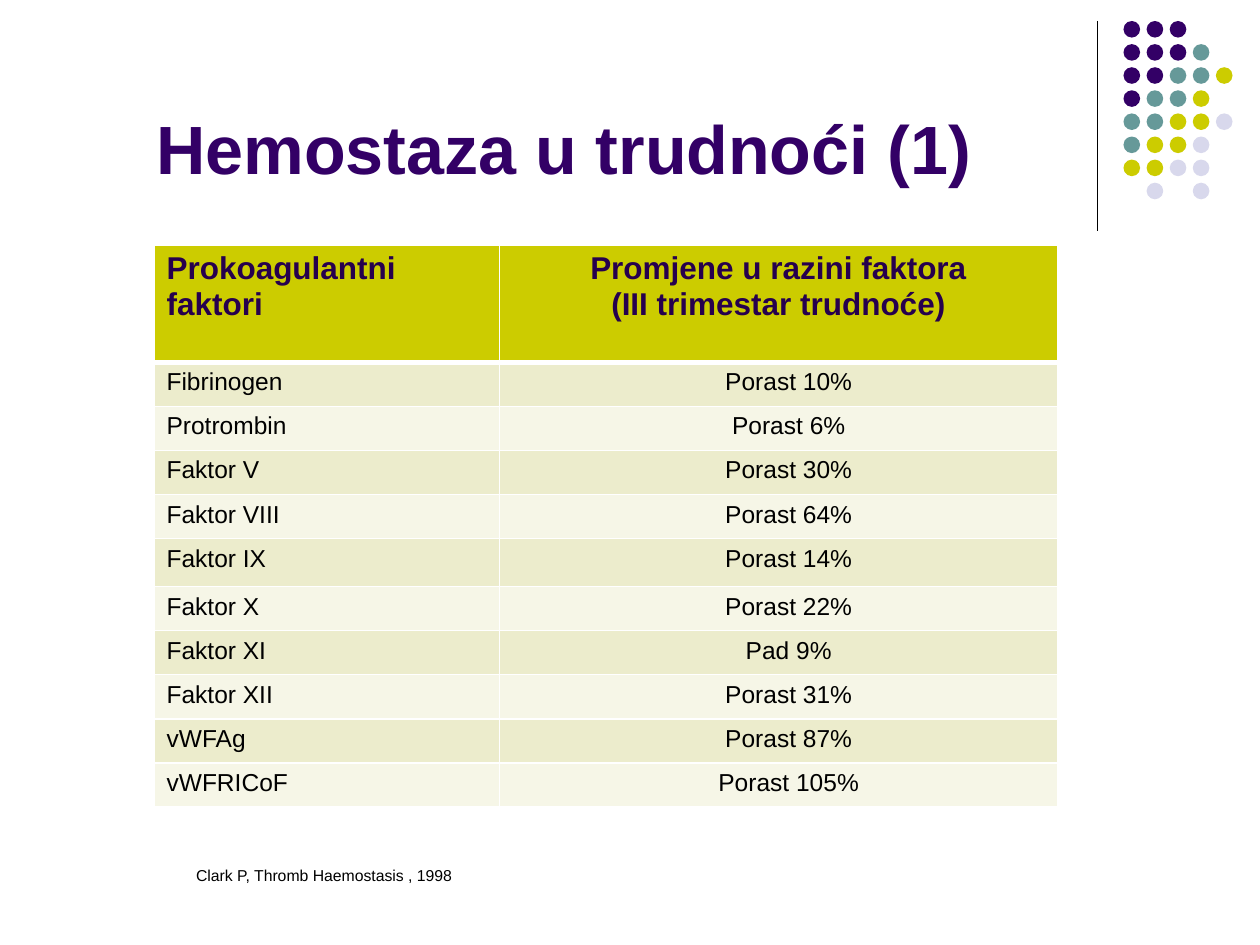
from pptx import Presentation
from pptx import util as u
from pptx.dml.color import RGBColor
from pptx.enum import shapes, text
from pptx.oxml import parse_xml
from pptx.oxml.ns import nsdecls

Pt = u.Pt
HUES = {"dark": "330066", "teal": "669999", "lime": "CCCC00", "pale": "D8D8EC",
        "head": "26004D", "odd": "ECECCC", "even": "F6F6E7",
        "black": "000000", "white": "FFFFFF"}
TITLE = "Hemostaza u trudnoći (1)"
SOURCE = "Clark P, Thromb Haemostasis , 1998"
ROWS = [
    ("Prokoagulantni faktori", "Promjene u razini faktora\n(III trimestar trudnoće)"),
    ("Fibrinogen", "Porast 10%"),
    ("Protrombin", "Porast 6%"),
    ("Faktor V", "Porast 30%"),
    ("Faktor VIII", "Porast 64%"),
    ("Faktor IX", "Porast 14%"),
    ("Faktor X", "Porast 22%"),
    ("Faktor XI", "Pad 9%"),
    ("Faktor XII", "Porast 31%"),
    ("vWFAg", "Porast 87%"),
    ("vWFRICoF", "Porast 105%"),
]
WIDTHS = [197.4, 318.9]
HEIGHTS = [67] + [25.2] * 4 + [27.4] + [25.2] * 5
DOTS = ["DDD", "DDDT", "DDTTL", "DTTL", "TTLLP", "TLLP", "LLPP", " P P"]
KEYS = {"D": "dark", "T": "teal", "L": "lime", "P": "pale"}


def color(name):
    return RGBColor.from_string(HUES[name])


def style(frame, size, hue, bold=False):
    for para in frame.paragraphs:
        for run in para.runs:
            font = run.font
            font.name, font.size, font.bold = "Arial", Pt(size), bold
            font.color.rgb = color(hue)


def border(cell, bottom):
    props = cell._tc.get_or_add_tcPr()
    sides = [("lnL", 1), ("lnR", 1), ("lnT", 1), ("lnB", bottom)]
    for spot, (side, width) in enumerate(sides):
        props.insert(spot, parse_xml(
            f'<a:{side} {nsdecls("a")} w="{Pt(width)}"><a:solidFill>'
            f'<a:srgbClr val="{HUES["white"]}"/></a:solidFill></a:{side}>'))


def add_dots(slide):
    rule = slide.shapes.add_connector(
        shapes.MSO_CONNECTOR.STRAIGHT, Pt(627), Pt(12), Pt(627), Pt(132))
    rule.line.color.rgb = color("black")
    rule.line.width = Pt(0.75)
    rule._element.spPr.append(parse_xml(f'<a:effectLst {nsdecls("a")}/>'))
    group = slide.shapes.add_group_shape()
    for row, line in enumerate(DOTS):
        for col, key in enumerate(line):
            if key == " ":
                continue
            dot = group.shapes.add_shape(
                shapes.MSO_SHAPE.OVAL, Pt(642 + 13.2 * col), Pt(12 + 13.2 * row),
                Pt(9.5), Pt(9.5))
            dot.shadow.inherit = False
            dot.fill.solid()
            dot.fill.fore_color.rgb = color(KEYS[key])
            dot.line.fill.background()


def add_title(slide):
    title = slide.shapes.title
    title.left, title.top, title.width, title.height = Pt(82), Pt(9.4), Pt(548), Pt(102)
    frame = title.text_frame
    frame.text = TITLE
    frame.vertical_anchor = text.MSO_ANCHOR.BOTTOM
    frame.paragraphs[0].alignment = text.PP_ALIGN.LEFT
    style(frame, 39, "dark", True)


def add_factors(slide):
    table = slide.shapes.add_table(
        len(ROWS), len(WIDTHS), Pt(88), Pt(140), Pt(sum(WIDTHS)), Pt(sum(HEIGHTS))).table
    for col, width in zip(table.columns, WIDTHS):
        col.width = Pt(width)
    for row, height in zip(table.rows, HEIGHTS):
        row.height = Pt(height)
    for r, row in enumerate(ROWS):
        head = r == 0
        fill = "lime" if head else "odd" if r % 2 else "even"
        for c, words in enumerate(row):
            cell = table.cell(r, c)
            frame = cell.text_frame
            frame.text = words
            cell.fill.solid()
            cell.fill.fore_color.rgb = color(fill)
            border(cell, 3 if head else 1)
            style(frame, 18 if head else 14, "head" if head else "black", head)
            if c:
                for para in frame.paragraphs:
                    para.alignment = text.PP_ALIGN.CENTER
                if not head:
                    cell.margin_left = Pt(19)


def add_source(slide):
    frame = slide.shapes.add_textbox(Pt(105), Pt(491), Pt(340), Pt(18)).text_frame
    frame.word_wrap = True
    frame.text = SOURCE
    style(frame, 9, "black")


def main():
    deck = Presentation()
    deck.slide_width, deck.slide_height = Pt(720), Pt(540)
    slide = deck.slides.add_slide(deck.slide_layouts[5])
    add_dots(slide)
    add_title(slide)
    add_factors(slide)
    add_source(slide)
    deck.save("out.pptx")


if __name__ == "__main__":
    main()
